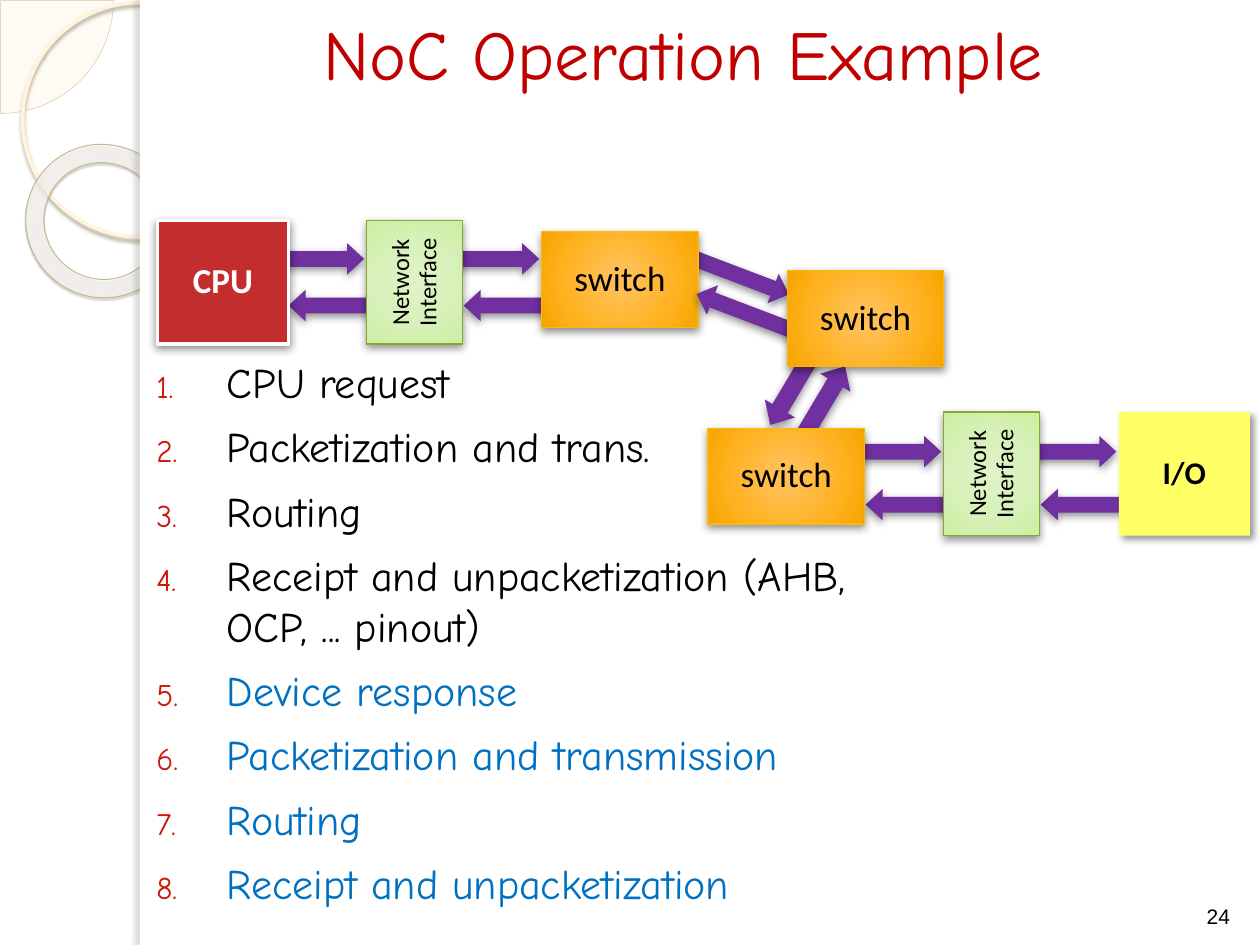
from lxml.etree import SubElement
from pptx import Presentation
from pptx.dml.color import RGBColor
from pptx.enum.shapes import MSO_SHAPE
from pptx.enum.text import MSO_ANCHOR, PP_ALIGN
from pptx.oxml.ns import qn
from pptx.util import Inches, Pt

WIDTH, HEIGHT = Inches(10), Inches(7.5)
COLUMNS, ROWS = 100, 75
COLORS = {
    "white": "FFFFFF", "black": "000000", "title": "C00000", "number": "D01608",
    "response": "0070C0", "arrow": "7030A0", "cpu": "C32D2E", "io": "FFFF66",
    "interface edge": "84AA33", "switch edge": "FEB80A",
    "pie": "FEFAF4", "pie edge": "D3C39F", "ring": "FFF5DE", "ring shade": "B0A68F",
    "donut edge": "C7B893", "donut shade": "5A5444", "panel shade": "736F63",
}
CENTER = (50, 50, 50, 50)
# Each gradient: stops of (position, colour, opacity), and the focus rectangle.
INTERFACE_FILL = ([(0, "DFF3C7", 100), (50, "D8F1BA", 100),
                   (97, "CDEFA2", 100), (100, "CAF199", 100)], CENTER)
SWITCH_FILL = ([(0, "FFBF54", 100), (15, "FFBF53", 100), (62, "FFB221", 100),
                (97, "F6A500", 100), (100, "D69900", 100)], CENTER)
DONUT_FILL = ([(0, "FFFCF6", 70), (70, "FFFEFB", 55), (100, "F0D28E", 60)],
              (-408, -50, 508, 150))
# Each shadow: colour, opacity, blur, distance, direction.
SOFT_SHADOW = ("black", 43, 5, 2, 90)
NOTE_SHADOW = ("black", 40, 4, 3, 45)

REQUEST_STEPS = ["CPU request", "Packetization and trans.", "Routing",
                 "Receipt and unpacketization (AHB, OCP, ... pinout)"]
RESPONSE_STEPS = ["Device response", "Packetization and transmission", "Routing",
                  "Receipt and unpacketization"]
HOP = 13.9


def rgb(name):
    return RGBColor.from_string(COLORS[name])


def cells(left, top, width, height):
    """Turn columns and rows of the slide grid into lengths."""
    column, row = WIDTH / COLUMNS, HEIGHT / ROWS
    return (round(left * column), round(top * row),
            round(width * column), round(height * row))


def add_color(parent, color, opacity):
    node = SubElement(parent, qn("a:srgbClr"), val=color)
    SubElement(node, qn("a:alpha"), val=str(opacity * 1000))


def fill_radial(shape, stops, focus):
    shape.fill.background()
    empty = shape._element.spPr.find(qn("a:noFill"))
    gradient = SubElement(shape._element.spPr, qn("a:gradFill"), rotWithShape="1")
    stop_list = SubElement(gradient, qn("a:gsLst"))
    for position, color, opacity in stops:
        stop = SubElement(stop_list, qn("a:gs"), pos=str(position * 1000))
        add_color(stop, color, opacity)
    circle = SubElement(gradient, qn("a:path"), path="circle")
    sides = {side: str(share * 1000) for side, share in zip("ltrb", focus)}
    SubElement(circle, qn("a:fillToRect"), **sides)
    empty.getparent().replace(empty, gradient)


def add_shadow(shape, color, opacity, blur, distance, direction):
    effects = shape._element.spPr.find(qn("a:effectLst"))
    shadow = SubElement(effects, qn("a:outerShdw"), blurRad=str(Pt(blur)),
                        dist=str(Pt(distance)), dir=str(direction * 60000),
                        rotWithShape="0")
    add_color(shadow, COLORS[color], opacity)


def add_figure(slide, kind, box, fill=None, line=None, shadow=None,
               adjustments=(), rotation=0):
    """Add a preset shape; fill is a colour name, a gradient or nothing."""
    figure = slide.shapes.add_shape(kind, *cells(*box))
    for index, value in enumerate(adjustments):
        figure.adjustments[index] = value
    figure.rotation = rotation
    if fill is None:
        figure.fill.background()
    elif isinstance(fill, str):
        figure.fill.solid()
        figure.fill.fore_color.rgb = rgb(fill)
    else:
        fill_radial(figure, *fill)
    if line:
        figure.line.color.rgb = rgb(line[0])
        figure.line.width = Pt(line[1])
    else:
        figure.line.fill.background()
    figure.shadow.inherit = False
    if shadow:
        add_shadow(figure, *shadow)
    return figure


def style(paragraph, font, size, color, bold=False):
    paragraph.font.name = font
    paragraph.font.size = Pt(size)
    paragraph.font.color.rgb = rgb(color)
    paragraph.font.bold = bold


def add_label(slide, box, text, font, size, color, anchor):
    frame = slide.shapes.add_textbox(*cells(*box)).text_frame
    frame.word_wrap = True
    frame.vertical_anchor = anchor
    label = frame.paragraphs[0]
    label.text = text
    label.alignment = PP_ALIGN.CENTER
    style(label, font, size, color)


def add_node(slide, box, text, size, fill, line=None, shadow=SOFT_SHADOW,
             color="black", bold=False, upward=False):
    node = add_figure(slide, MSO_SHAPE.ROUNDED_RECTANGLE, box, fill, line, shadow, [0])
    frame = node.text_frame
    frame.word_wrap = True
    frame.vertical_anchor = MSO_ANCHOR.MIDDLE
    if upward:
        frame._txBody.bodyPr.set("vert", "vert270")
    caption = frame.paragraphs[0]
    caption.text = text
    caption.alignment = PP_ALIGN.CENTER
    caption.line_spacing = 0.93
    style(caption, "Calibri", size, color, bold)


def add_interface(slide, left, top):
    add_node(slide, (left, top, 7.6, 9.8), "Network Interface", 14, INTERFACE_FILL,
             ("interface edge", 0.75), upward=True)


def add_switch(slide, left, top):
    add_node(slide, (left, top, 12.4, 7.6), "switch", 20, SWITCH_FILL,
             ("switch edge", 0.75))


def add_arrow(slide, left, top, width=6.7, height=2.5, rotation=0):
    add_figure(slide, MSO_SHAPE.RIGHT_ARROW, (left, top, width, height), "arrow",
               shadow=SOFT_SHADOW, adjustments=(0.5, 0.54), rotation=rotation)


def number_paragraph(paragraph):
    properties = paragraph._p.get_or_add_pPr()
    indent = Inches(0.56)
    properties.set("marL", str(indent))
    properties.set("indent", str(-indent))
    color = SubElement(properties, qn("a:buClr"))
    SubElement(color, qn("a:srgbClr"), val=COLORS["number"])
    SubElement(properties, qn("a:buSzPct"), val="75000")
    SubElement(properties, qn("a:buFont"), typeface="+mj-lt")
    SubElement(properties, qn("a:buAutoNum"), type="arabicPeriod")


def add_steps(slide):
    frame = slide.shapes.add_textbox(*cells(12.4, 28.3, 64.2, 45)).text_frame
    frame.word_wrap = True
    frame.margin_left = frame.margin_right = frame.margin_top = frame.margin_bottom = 0
    steps = ([(text, "black") for text in REQUEST_STEPS]
             + [(text, "response") for text in RESPONSE_STEPS])
    for index, (text, color) in enumerate(steps):
        step = frame.add_paragraph() if index else frame.paragraphs[0]
        step.text = text
        step.space_before = Pt(8)
        number_paragraph(step)
        style(step, "Comic Neue", 24, color)


def add_backdrop(slide):
    add_figure(slide, MSO_SHAPE.PIE, (-8.9, -8.9, 17.9, 17.9), "pie",
               ("pie edge", 0.25), adjustments=(0, 54))
    add_figure(slide, MSO_SHAPE.OVAL, (1.8, 0.2, 18.6, 18.6), None, ("ring", 2.15),
               ("ring shade", 85, 2, 2, 90))
    add_figure(slide, MSO_SHAPE.DONUT, (2, 11.5, 12.3, 12.1), DONUT_FILL,
               ("donut edge", 0.58), ("donut shade", 35, 1, 1.2, 75), [0.12], 38.6)
    add_figure(slide, MSO_SHAPE.RECTANGLE, (11.1, 0, 88.9, 75), "white")
    add_figure(slide, MSO_SHAPE.RECTANGLE, (11.1, 0, 0.8, 75), "white",
               shadow=("panel shade", 25, 3, 3, 180))


def add_network(slide):
    for left, request_top, response_top in [(22.2, 19.3, 23), (68, 34.6, 38.8)]:
        for hop in range(2):
            add_arrow(slide, left + hop * HOP, request_top)
            add_arrow(slide, left + 0.7 + hop * HOP, response_top, rotation=180)
    add_arrow(slide, 54.3, 20.6, 8.6, rotation=20.8)
    add_node(slide, (12.5, 17.5, 10.4, 9.8), "CPU", 20, "cpu", ("white", 2),
             color="white", bold=True)
    add_node(slide, (88.8, 32.7, 10.4, 9.8), "I/O", 18, "io", shadow=NOTE_SHADOW,
             bold=True)
    add_interface(slide, 29.1, 17.5)
    add_interface(slide, 74.9, 32.7)
    add_switch(slide, 43, 18.4)
    add_arrow(slide, 55, 23.6, 8.6, rotation=200.8)
    add_arrow(slide, 59.3, 29.1, 7.5, 2.8, 120.8)
    add_arrow(slide, 61.4, 30.9, 7.5, 2.8, 300.8)
    add_switch(slide, 62.5, 21.5)
    add_switch(slide, 56.2, 34)


def main():
    deck = Presentation()
    deck.slide_width, deck.slide_height = WIDTH, HEIGHT
    slide = deck.slides.add_slide(deck.slide_layouts[6])
    add_backdrop(slide)
    add_label(slide, (11.2, 0, 86, 8.3), "NoC Operation Example", "Comic Neue", 40,
              "title", MSO_ANCHOR.MIDDLE)
    add_steps(slide)
    add_network(slide)
    add_label(slide, (94.2, 69, 5, 5.2), "24", "Arial", 12, "black", MSO_ANCHOR.BOTTOM)
    deck.save("out.pptx")


if __name__ == "__main__":
    main()
